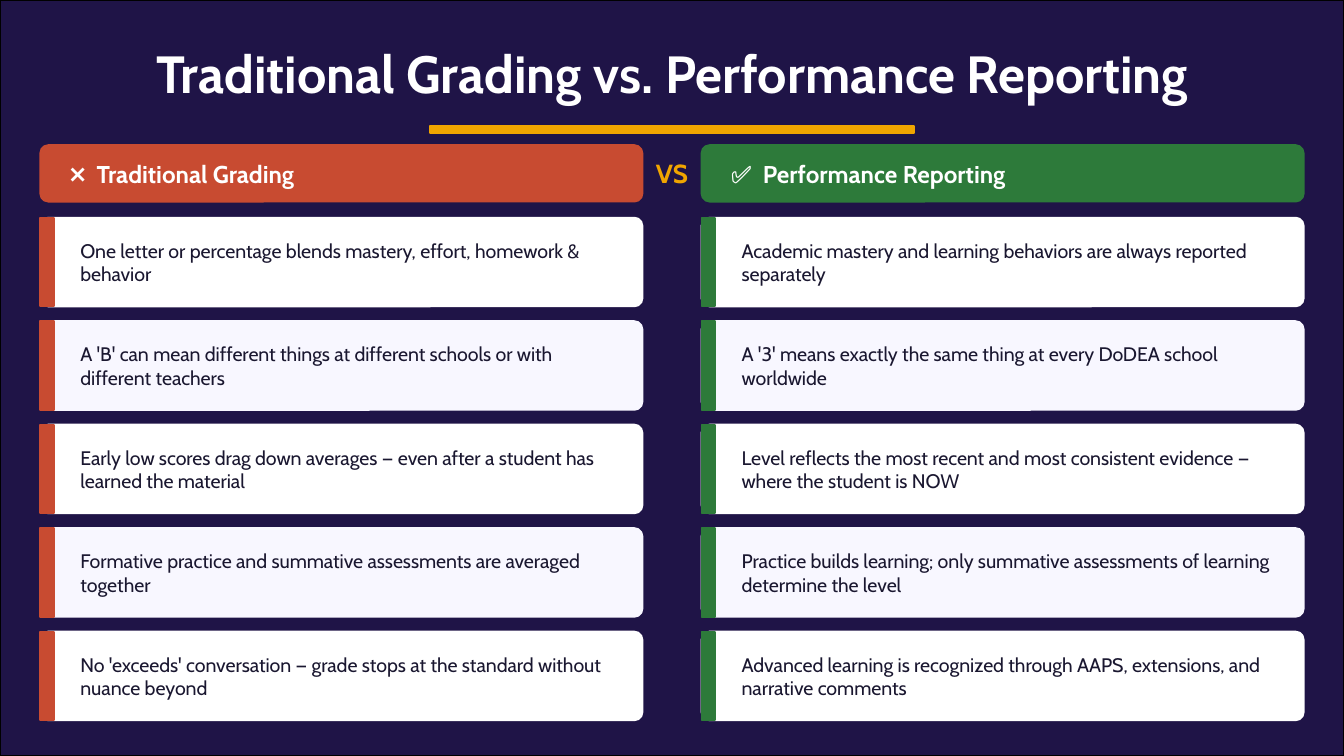
from lxml import etree
from pptx import Presentation
from pptx.dml.color import RGBColor
from pptx.enum.shapes import MSO_SHAPE
from pptx.enum.text import MSO_ANCHOR, PP_ALIGN
from pptx.oxml.ns import qn
from pptx.util import Pt

RECT, ROUNDED = MSO_SHAPE.RECTANGLE, MSO_SHAPE.ROUNDED_RECTANGLE
MIDDLE = MSO_ANCHOR.MIDDLE
LEFT, CENTER = PP_ALIGN.LEFT, PP_ALIGN.CENTER

FONT = "Cabin"
PURPLE = RGBColor(0x2A, 0x1C, 0x60)
BLACK = RGBColor(0x00, 0x00, 0x00)
WHITE = RGBColor(0xFF, 0xFF, 0xFF)
LAVENDER = RGBColor(0xF8, 0xF7, 0xFF)
INK = RGBColor(0x1A, 0x17, 0x30)
GOLD = RGBColor(0xF0, 0xA5, 0x00)
RED = RGBColor(0xC8, 0x4B, 0x31)
GREEN = RGBColor(0x2D, 0x7A, 0x3A)

PAGE_WIDTH, PAGE_HEIGHT = 720, 405
MARGIN = 21.6
COLUMN_TOP, COLUMN_WIDTH = 77.76, 322.56
HEADER_HEIGHT = 30.24
CARDS_OFFSET, CARD_HEIGHT, CARD_PITCH = 38.88, 47.52, 55.44
CORNER = 4.32

TRADITIONAL = [
    "One letter or percentage blends mastery, effort, homework & behavior",
    "A 'B' can mean different things at different schools or with different teachers",
    "Early low scores drag down averages — even after a student has learned the material",
    "Formative practice and summative assessments are averaged together",
    "No 'exceeds' conversation — grade stops at the standard without nuance beyond",
]
PERFORMANCE = [
    "Academic mastery and learning behaviors are always reported separately",
    "A '3' means exactly the same thing at every DoDEA school worldwide",
    "Level reflects the most recent and most consistent evidence — where the student is NOW",
    "Practice builds learning; only summative assessments of learning determine the level",
    "Advanced learning is recognized through AAPS, extensions, and narrative comments",
]


def add_block(page, kind, left, top, width, height, color):
    block = page.shapes.add_shape(kind, Pt(left), Pt(top), Pt(width), Pt(height))
    block.shadow.inherit = False
    block.fill.solid()
    block.fill.fore_color.rgb = color
    block.line.color.rgb = color
    block.line.width = Pt(1)
    if kind == ROUNDED:
        block.adjustments[0] = CORNER / height
    return block


def add_text(page, text, left, top, width, height, size, color,
             bold=True, align=LEFT, inset=7.2):
    box = page.shapes.add_textbox(Pt(left), Pt(top), Pt(width), Pt(height))
    frame = box.text_frame
    frame.word_wrap = True
    frame.vertical_anchor = MIDDLE
    frame.margin_left = frame.margin_right = Pt(inset)
    para = frame.paragraphs[0]
    para.text = text
    para.alignment = align
    para.font.name = FONT
    para.font.size = Pt(size)
    para.font.bold = bold
    para.font.color.rgb = color


def add_backdrop(page):
    """Colour the page and darken it with a 25% black veil."""
    page.background.fill.solid()
    page.background.fill.fore_color.rgb = PURPLE
    veil = add_block(page, RECT, 0, 0, PAGE_WIDTH, PAGE_HEIGHT, BLACK)
    color = veil.fill._xPr.find(qn("a:solidFill"))[0]
    etree.SubElement(color, qn("a:alpha")).set("val", "25000")


def add_title(page, left, top, width):
    add_text(page, "Traditional Grading vs. Performance Reporting",
             left, top, width, 48.96, 28, WHITE, align=CENTER)
    rule_width = 0.4 * width
    add_block(page, RECT, left + (width - rule_width) / 2, top + 53.28,
              rule_width, 3.6, GOLD)


def add_card(page, text, left, top, width, height, fill, accent):
    add_block(page, ROUNDED, left, top, width, height, fill)
    add_block(page, RECT, left, top, 7.2, height, accent)
    add_text(page, text, left + 14.4, top + 2.16, width - 20.16, height - 4.32,
             10.5, INK, bold=False)


def add_column(page, heading, points, left, top, width, accent):
    add_block(page, ROUNDED, left, top, width, HEADER_HEIGHT, accent)
    add_text(page, heading, left + 8.64, top, width - 12.96, HEADER_HEIGHT, 13, WHITE)
    for index, point in enumerate(points):
        add_card(page, point, left, top + CARDS_OFFSET + index * CARD_PITCH,
                 width, CARD_HEIGHT, LAVENDER if index % 2 else WHITE, accent)


def main():
    deck = Presentation()
    deck.slide_width, deck.slide_height = Pt(PAGE_WIDTH), Pt(PAGE_HEIGHT)
    page = deck.slides.add_slide(deck.slide_layouts[6])
    add_backdrop(page)
    add_title(page, 36, 14.4, 648)

    right_column = PAGE_WIDTH - MARGIN - COLUMN_WIDTH
    gap_left = MARGIN + COLUMN_WIDTH
    add_column(page, "❌  Traditional Grading", TRADITIONAL,
               MARGIN, COLUMN_TOP, COLUMN_WIDTH, RED)
    add_column(page, "✅  Performance Reporting", PERFORMANCE,
               right_column, COLUMN_TOP, COLUMN_WIDTH, GREEN)
    add_text(page, "VS", gap_left, COLUMN_TOP, right_column - gap_left,
             HEADER_HEIGHT, 14, GOLD, align=CENTER, inset=0)
    deck.save("out.pptx")


if __name__ == "__main__":
    main()
